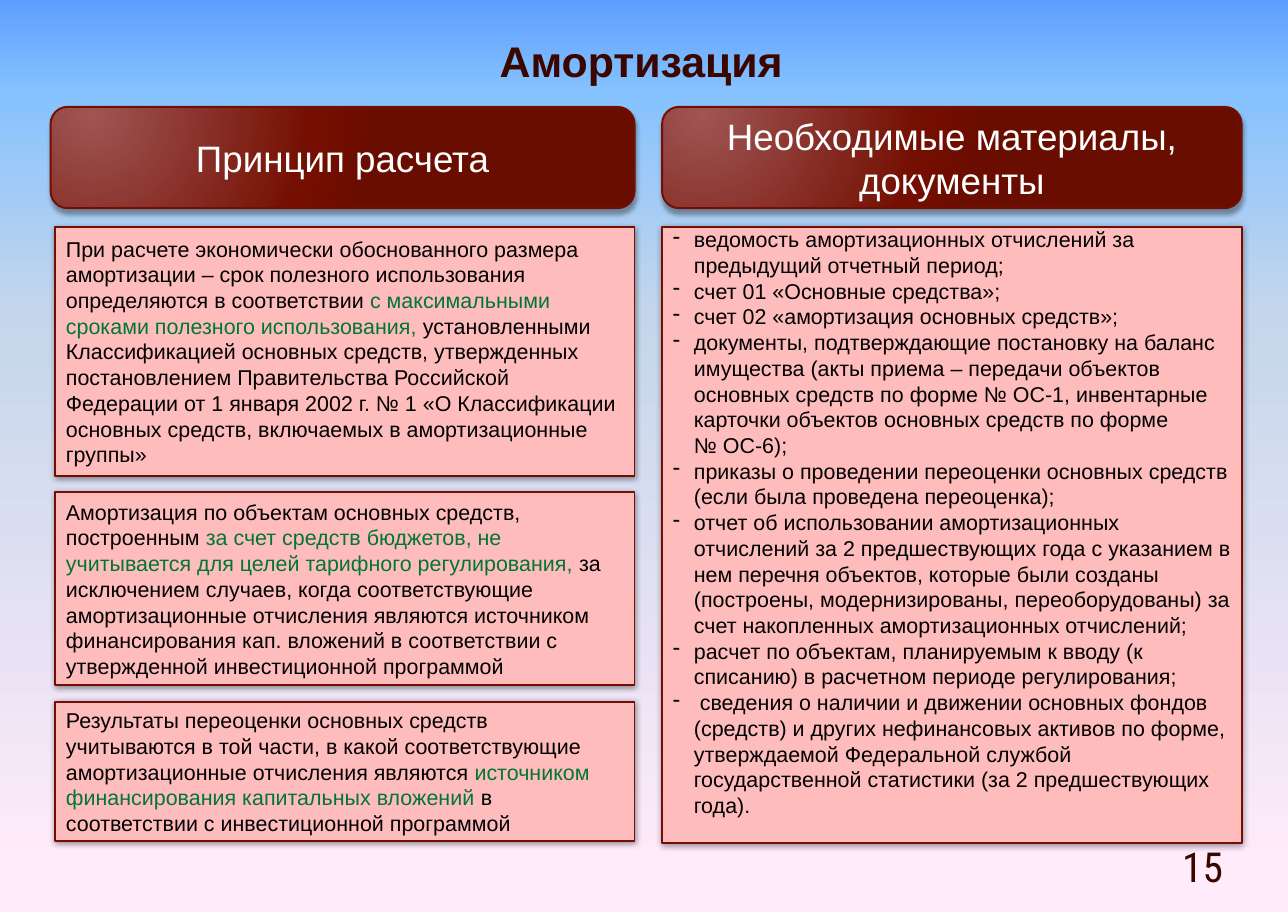
from lxml.etree import SubElement
from pptx import Presentation
from pptx.dml.color import RGBColor
from pptx.enum.shapes import MSO_SHAPE
from pptx.enum.text import MSO_ANCHOR, PP_ALIGN
from pptx.oxml.ns import qn
from pptx.util import Inches, Pt

COLORS = {
    "title": "3A0700", "line": "730E00", "panel": "FFBCBC",
    "black": "000000", "green": "007635", "white": "FFFFFF",
}
SKY = [(0, "5E9EFF"), (10, "85C2FF"), (34, "C4D6EB"), (95, "FFEBFA")]
MAROON = [(0, "9F5554"), (76, "730E00"), (100, "680D00")]


def set_gradient(fill, parent, stops, radial):
    fill.gradient()
    grad = next(parent.iter(qn("a:gradFill")))
    for child in list(grad):
        grad.remove(child)
    gs_list = SubElement(grad, qn("a:gsLst"))
    for pos, color in stops:
        gs = SubElement(gs_list, qn("a:gs"), pos=str(pos * 1000))
        SubElement(gs, qn("a:srgbClr"), val=color)
    if radial:
        path = SubElement(grad, qn("a:path"), path="circle")
        SubElement(path, qn("a:fillToRect"), l="15000", t="15000", r="100000", b="100000")
    else:
        SubElement(grad, qn("a:lin"), ang="5400000", scaled="0")


def add_box(kind, left, top, width, height, shadow):
    sp = s.shapes.add_shape(kind, Inches(left), Inches(top), Inches(width), Inches(height))
    sp.line.color.rgb = RGBColor.from_string(COLORS["line"])
    sp.line.width = Pt(1.25)
    sp.shadow.inherit = False
    alpha, blur, dist, angle = shadow
    effects = sp._element.spPr.find(qn("a:effectLst"))
    outer = SubElement(effects, qn("a:outerShdw"), blurRad=str(Pt(blur)), dist=str(Pt(dist)),
                       dir=str(angle * 60000), rotWithShape="0")
    clr = SubElement(outer, qn("a:srgbClr"), val=COLORS["black"])
    SubElement(clr, qn("a:alpha"), val=str(alpha * 1000))
    sp.text_frame.word_wrap = True
    sp.text_frame.vertical_anchor = MSO_ANCHOR.MIDDLE
    return sp


prs = Presentation()
prs.slide_width = Inches(11.69)
prs.slide_height = Inches(8.28)
s = prs.slides.add_slide(prs.slide_layouts[5])
set_gradient(s.background.fill, s._element, SKY, False)

title = s.shapes.title
title.left, title.top, title.width, title.height = [Inches(v) for v in (4.42, 0.26, 2.8, 0.57)]
title.text_frame.text = "Амортизация"
title.text_frame.word_wrap = False

number = s.shapes.add_textbox(Inches(10.43), Inches(7.64), Inches(0.97), Inches(0.44))
tf = number.text_frame
tf.text = "15"
tf.margin_left = tf.margin_right = tf.margin_top = tf.margin_bottom = 0

for sp, font, size, bold in [(title, "Arial", 28, True), (number, "Roboto Condensed", 27, False)]:
    sp.text_frame.vertical_anchor = MSO_ANCHOR.MIDDLE
    p = sp.text_frame.paragraphs[0]
    p.alignment = PP_ALIGN.CENTER
    r = p.runs[0]
    r.font.name, r.font.size, r.font.bold = font, Pt(size), bold
    r.font.color.rgb = RGBColor.from_string(COLORS["title"])

headers = [
    (0.46, 5.3, "Принцип расчета"),
    (6.01, 5.26, "Необходимые материалы, документы"),
]
for left, width, text in headers:
    sp = add_box(MSO_SHAPE.ROUNDED_RECTANGLE, left, 0.97, width, 0.92, (35, 3, 3, 90))
    set_gradient(sp.fill, sp._element.spPr, MAROON, True)
    p = sp.text_frame.paragraphs[0]
    p.text = text
    p.alignment = PP_ALIGN.CENTER
    r = p.runs[0]
    r.font.name, r.font.size = "Arial", Pt(24)
    r.font.color.rgb = RGBColor.from_string(COLORS["white"])

principles = [
    (2.06, 2.26, [
        "При расчете экономически обоснованного размера амортизации – срок полезного "
        "использования определяются в соответствии ",
        "с максимальными сроками полезного использования, ",
        "установленными Классификацией основных средств, утвержденных постановлением "
        "Правительства Российской Федерации от 1 января 2002 г. № 1 «О Классификации "
        "основных средств, включаемых в амортизационные группы»"]),
    (4.47, 1.75, [
        "Амортизация по объектам основных средств, построенным ",
        "за счет средств бюджетов, не учитывается для целей тарифного регулирования, ",
        "за исключением случаев, когда соответствующие амортизационные отчисления являются "
        "источником финансирования кап. вложений в соответствии с утвержденной "
        "инвестиционной программой"]),
    (6.37, 1.27, [
        "Результаты переоценки основных средств учитываются в той части, в какой "
        "соответствующие амортизационные отчисления являются ",
        "источником финансирования капитальных вложений ",
        "в соответствии с инвестиционной программой"]),
]
documents = [
    "ведомость амортизационных отчислений за предыдущий отчетный период;",
    "счет 01 «Основные средства»;",
    "счет 02 «амортизация основных средств»;",
    "документы, подтверждающие постановку на баланс имущества (акты приема – передачи "
    "объектов основных средств по форме № ОС-1, инвентарные карточки объектов основных "
    "средств по форме\v№ ОС-6);",
    "приказы о проведении переоценки основных средств (если была проведена переоценка);",
    "отчет об использовании амортизационных отчислений за 2 предшествующих года с указанием "
    "в нем перечня объектов, которые были созданы (построены, модернизированы, "
    "переоборудованы) за счет накопленных амортизационных отчислений;",
    "расчет по объектам, планируемым к вводу (к списанию) в расчетном периоде регулирования;",
    " сведения о наличии и движении основных фондов (средств) и других нефинансовых активов "
    "по форме, утверждаемой Федеральной службой государственной статистики "
    "(за 2 предшествующих года).",
]
panels = [(0.5, top, height, [parts], False) for top, height, parts in principles]
panels.append((6.01, 2.06, 5.59, [[text] for text in documents], True))

for left, top, height, paragraphs, bulleted in panels:
    sp = add_box(MSO_SHAPE.RECTANGLE, left, top, 5.26, height, (40, 4, 1, 88))
    sp.fill.solid()
    sp.fill.fore_color.rgb = RGBColor.from_string(COLORS["panel"])
    tf = sp.text_frame
    if bulleted:
        tf.margin_bottom = Inches(0.28)
    for i, parts in enumerate(paragraphs):
        p = tf.add_paragraph() if i else tf.paragraphs[0]
        p.alignment = PP_ALIGN.LEFT
        if bulleted:
            pPr = p._p.get_or_add_pPr()
            pPr.set("marL", str(Inches(0.19)))
            pPr.set("indent", str(-Inches(0.19)))
            SubElement(pPr, qn("a:buChar"), char="-")
            p.text = parts[0]
        else:
            for part in parts:
                p.add_run().text = part
        for r, color in zip(p.runs, ("black", "black") if bulleted else ("black", "green", "black")):
            r.font.name, r.font.size = "Arial", Pt(14)
            r.font.color.rgb = RGBColor.from_string(COLORS[color])

prs.save("out.pptx")
